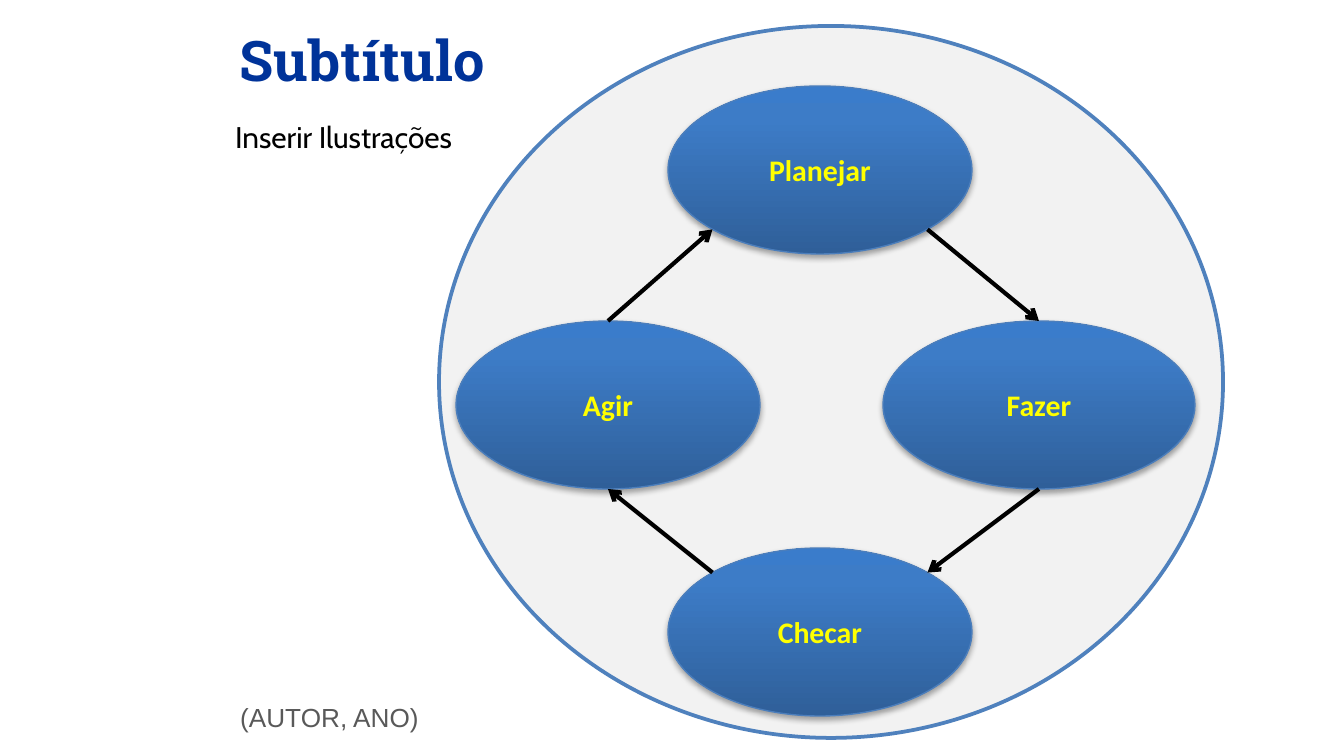
"""Build a slide with a four-step plan, do, check, act cycle."""
import copy
import math

from pptx import Presentation
from pptx import util as u
from pptx.dml.color import RGBColor
from pptx.enum import shapes, text
from pptx.oxml import parse_xml
from pptx.oxml.ns import nsdecls, qn

SIZE = 1344, 756
RING = 439, 26, 784, 712
STEPS = {
    "Planejar": (668, 86, 304, 168),
    "Checar": (668, 548, 304, 168),
    "Fazer": (883, 321, 312, 168),
    "Agir": (456, 321, 304, 168),
}
# Each end is a step and the direction (x, y) from its centre.
ARROWS = [
    (("Planejar", 1, 1), ("Fazer", 0, -1)),
    (("Fazer", 0, 1), ("Checar", 1, -1)),
    (("Checar", -1, -1), ("Agir", 0, 1)),
    (("Agir", 0, -1), ("Planejar", -1, 1)),
]
NOTES = [
    ("(AUTOR, ANO)", (227, 695, 207, 46), 14, "Arial", "595959", False),
    ("Subtítulo", (226, 19, 288, 82), 30, "Roboto Slab", "003399", True),
    ("Inserir Ilustrações", (222, 112, 292, 50), 16, "Cabin", "000000", False),
]
STOPS = [(0, "2F5F99"), (0.8, "3D7CC7"), (1, "3A7CCB")]
SHADE = (
    f'<a:outerShdw {nsdecls("a")} blurRad="39370" dist="22860" dir="5400000" '
    'rotWithShape="0"><a:srgbClr val="000000"><a:alpha val="35000"/>'
    "</a:srgbClr></a:outerShdw>"
)


def px(*vals):
    return [u.Emu(round(v * 914400 / 134.4)) for v in vals]


def rgb(code):
    return RGBColor.from_string(code)


def stroke(line, code, width):
    line.color.rgb = rgb(code)
    line.width = u.Pt(width)


def write(para, words, size, font, code, bold):
    run = para.add_run()
    run.text = words
    run.font.size = u.Pt(size)
    run.font.name = font
    run.font.bold = bold
    run.font.color.rgb = rgb(code)


def oval(group, box, code, width):
    shape = group.shapes.add_shape(shapes.MSO_SHAPE.OVAL, *px(*box))
    shape.shadow.inherit = False
    stroke(shape.line, code, width)
    return shape


def blend(fill):
    fill.gradient()
    fill.gradient_angle = 90
    stops = fill._fill._gradFill.find(qn("a:gsLst"))
    stops.append(copy.deepcopy(stops[0]))
    for stop, (place, code) in zip(fill.gradient_stops, STOPS):
        stop.position = place
        stop.color.rgb = rgb(code)


def step(group, name, box):
    shape = oval(group, box, "4B7EBC", 0.75)
    blend(shape.fill)
    shape._element.spPr.find(qn("a:effectLst")).append(parse_xml(SHADE))
    frame = shape.text_frame
    frame.vertical_anchor = text.MSO_ANCHOR.MIDDLE
    para = frame.paragraphs[0]
    para.alignment = text.PP_ALIGN.CENTER
    write(para, name, 16, "Calibri", "FFFF00", True)


def edge(name, dx, dy):
    x, y, w, h = STEPS[name]
    norm = math.hypot(dx, dy)
    return px(x + w / 2 * (1 + dx / norm), y + h / 2 * (1 + dy / norm))


def arrow(group, start, end):
    link = group.shapes.add_connector(
        shapes.MSO_CONNECTOR.STRAIGHT, *edge(*start), *edge(*end))
    stroke(link.line, "000000", 2.25)
    head = parse_xml(f'<a:tailEnd {nsdecls("a")} type="arrow"/>')
    link.line._get_or_add_ln().append(head)
    link._element.spPr.append(parse_xml(f'<a:effectLst {nsdecls("a")}/>'))


def note(slide, words, box, *style):
    frame = slide.shapes.add_textbox(*px(*box)).text_frame
    frame.word_wrap = True
    write(frame.paragraphs[0], words, *style)


def main():
    deck = Presentation()
    deck.slide_width, deck.slide_height = px(*SIZE)
    slide = deck.slides.add_slide(deck.slide_layouts[6])
    group = slide.shapes.add_group_shape()
    ring = oval(group, RING, "4F81BD", 2)
    ring.fill.solid()
    ring.fill.fore_color.rgb = rgb("F2F2F2")
    for name, box in STEPS.items():
        step(group, name, box)
    for start, end in ARROWS:
        arrow(group, start, end)
    for item in NOTES:
        note(slide, *item)
    deck.save("out.pptx")


if __name__ == "__main__":
    main()
